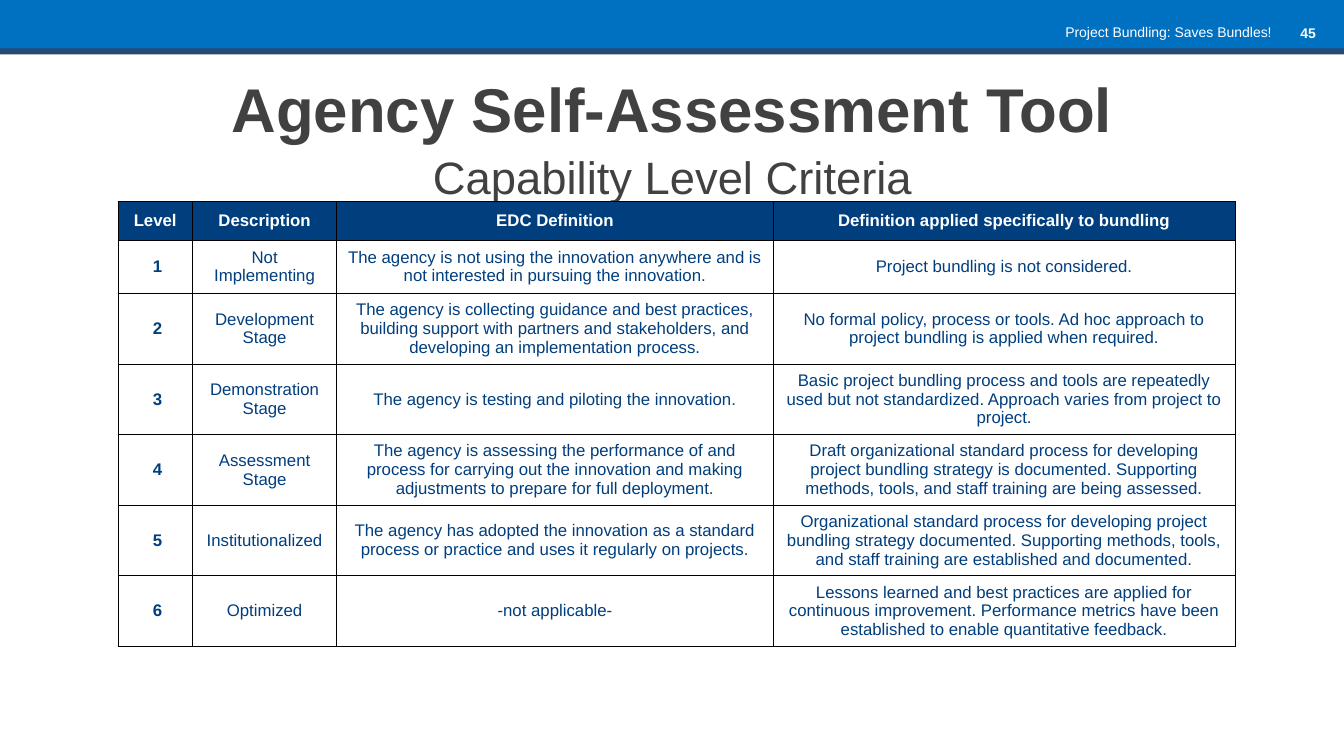
from lxml import etree
from pptx import Presentation
from pptx.dml.color import RGBColor
from pptx.enum.shapes import MSO_SHAPE
from pptx.enum.text import MSO_ANCHOR, MSO_AUTO_SIZE, PP_ALIGN
from pptx.oxml.ns import qn
from pptx.util import Inches, Pt

RECT = MSO_SHAPE.RECTANGLE
MIDDLE = MSO_ANCHOR.MIDDLE
NO_FIT = MSO_AUTO_SIZE.NONE
CENTER, RIGHT = PP_ALIGN.CENTER, PP_ALIGN.RIGHT

# Content
TITLE = "Agency Self-Assessment Tool"
SUBTITLE = "Capability Level Criteria"
RUNNING_HEAD = "Project Bundling: Saves Bundles!"
PAGE_NUMBER = "45"
HEADINGS = ("Level", "Description", "EDC Definition",
            "Definition applied specifically to bundling")
LEVELS = [
    (" 1", "Not Implementing",
     "The agency is not using the innovation anywhere and is not interested in "
     "pursuing the innovation.",
     "Project bundling is not considered."),
    (" 2", "Development Stage",
     "The agency is collecting guidance and best practices, building support with "
     "partners and stakeholders, and developing an implementation process.",
     "No formal policy, process or tools. Ad hoc approach to project bundling is "
     "applied when required."),
    (" 3", "Demonstration Stage",
     "The agency is testing and piloting the innovation.",
     "Basic project bundling process and tools are repeatedly used but not "
     "standardized. Approach varies from project to project."),
    (" 4", "Assessment Stage",
     "The agency is assessing the performance of and process for carrying out the "
     "innovation and making adjustments to prepare for full deployment.",
     "Draft organizational standard process for developing project bundling strategy "
     "is documented. Supporting methods, tools, and staff training are being assessed."),
    (" 5", "Institutionalized",
     "The agency has adopted the innovation as a standard process or practice and "
     "uses it regularly on projects.",
     "Organizational standard process for developing project bundling strategy "
     "documented. Supporting methods, tools, and staff training are established and "
     "documented."),
    (" 6", "Optimized",
     "-not applicable-",
     "Lessons learned and best practices are applied for continuous improvement. "
     "Performance metrics have been established to enable quantitative feedback."),
]

# Layout and colours
SLIDE_W, SLIDE_H = 13.33, 7.5
TABLE_LEFT, TABLE_TOP = 1.17, 2
COLUMNS = (0.74, 1.43, 4.33, 4.58)
ROWS = [0.38, 0.53] + [0.66] * (len(LEVELS) - 1)
BLUE, SLATE, NAVY = "0070C0", "284971", "003E7E"
GRAY, WHITE, BLACK = "414142", "FFFFFF", "000000"


def color(hex_value):
    return RGBColor.from_string(hex_value)


def write(paragraph, text, size=12, ink=NAVY, bold=False, align=CENTER):
    paragraph.alignment = align
    run = paragraph.add_run()
    run.text = text
    run.font.name = "Arial"
    run.font.size = Pt(size)
    run.font.bold = bold
    run.font.color.rgb = color(ink)


def add_band(slide, top, height, fill):
    band = slide.shapes.add_shape(RECT, 0, Inches(top), Inches(SLIDE_W), Inches(height))
    band.shadow.inherit = False
    band.fill.solid()
    band.fill.fore_color.rgb = color(fill)
    band.line.fill.background()


def add_label(slide, text, left, top, width, height, **style):
    label = slide.shapes.add_textbox(*map(Inches, (left, top, width, height)))
    label.text_frame.word_wrap = True
    write(label.text_frame.paragraphs[0], text, size=10, ink=WHITE, align=RIGHT, **style)


def add_borders(cell):
    properties = cell._tc.get_or_add_tcPr()
    for index, side in enumerate(("a:lnL", "a:lnR", "a:lnT", "a:lnB")):
        border = etree.Element(qn(side), w=str(Pt(0.5)))
        fill = etree.SubElement(border, qn("a:solidFill"))
        etree.SubElement(fill, qn("a:srgbClr"), val=BLACK)
        properties.insert(index, border)


def add_levels_table(slide):
    table = slide.shapes.add_table(
        len(ROWS), len(COLUMNS), Inches(TABLE_LEFT), Inches(TABLE_TOP),
        Inches(sum(COLUMNS)), Inches(sum(ROWS))).table
    table.horz_banding = False
    for column, width in zip(table.columns, COLUMNS):
        column.width = Inches(width)
    for row, height in zip(table.rows, ROWS):
        row.height = Inches(height)
    for r, texts in enumerate([HEADINGS] + LEVELS):
        heading = r == 0
        for c, text in enumerate(texts):
            cell = table.cell(r, c)
            cell.vertical_anchor = MIDDLE
            if heading:
                cell.margin_left = cell.margin_right = 0
                cell.fill.solid()
                cell.fill.fore_color.rgb = color(NAVY)
            else:
                cell.fill.background()
            add_borders(cell)
            write(cell.text_frame.paragraphs[0], text,
                  ink=WHITE if heading else NAVY, bold=heading or c == 0)


def main():
    deck = Presentation()
    deck.slide_width, deck.slide_height = Inches(SLIDE_W), Inches(SLIDE_H)
    slide = deck.slides.add_slide(deck.slide_layouts[5])

    # Top bands with running head and page number
    add_band(slide, -0.04, 0.57, BLUE)
    add_label(slide, PAGE_NUMBER, 12.15, 0.19, 1, 0.4, bold=True)
    add_band(slide, 0.48, 0.06, SLATE)
    add_label(slide, RUNNING_HEAD, 8.78, 0.18, 3.93, 0.27)

    # Title
    title = slide.shapes.title
    title.left, title.top, title.width, title.height = map(Inches, (0.67, 0.67, 12, 1.33))
    title.text_frame.auto_size = NO_FIT
    title.text_frame.vertical_anchor = MIDDLE
    heading = title.text_frame.paragraphs[0]
    heading.line_spacing = 1.08
    write(heading, TITLE, size=44.1, ink=GRAY, bold=True)
    heading.add_line_break()
    write(heading, SUBTITLE, size=32.4, ink=GRAY)

    # Capability levels
    add_levels_table(slide)
    deck.save("out.pptx")


if __name__ == "__main__":
    main()
